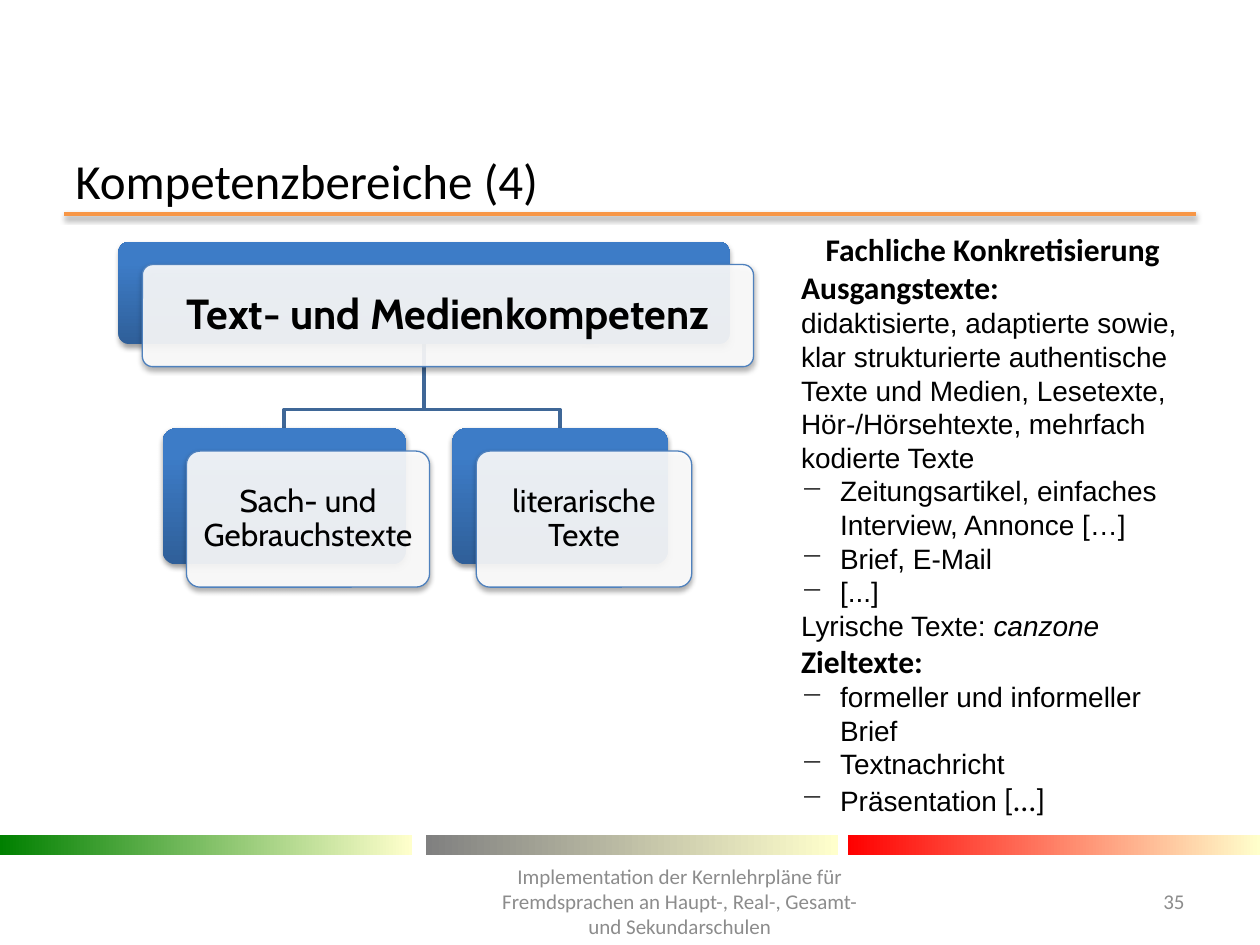
from dataclasses import dataclass

from lxml import etree
from pptx import Presentation
from pptx import util as u
from pptx.dml import color
from pptx.enum import shapes, text
from pptx.oxml import ns


@dataclass(frozen=True)
class Theme:
    black: str = "000000"
    white: str = "FFFFFF"
    gray: str = "8C8C8C"
    orange: str = "F79646"
    edge: str = "4F81BD"
    link: str = "3F6797"
    deep: str = "2F5F99"
    blue: str = "3D7CC7"
    cream: str = "FFFFCC"
    bars: tuple = ("008000", "808080", "FF0000")
    title: int = 28
    root: int = 24
    head: int = 18
    body: int = 16
    foot: int = 12


T = Theme()
HEAD = {"name": "Calibri", "size": T.head, "bold": True}
BODY = {"name": "Arial", "size": T.body}
FOOT = {"name": "Calibri", "size": T.foot, "color": T.gray}
LEAF = {"name": "Cabin", "size": T.head}
CENTER = text.PP_ALIGN.CENTER
MIDDLE = text.MSO_ANCHOR.MIDDLE


def rgb(code):
    return color.RGBColor.from_string(code)


def add_xml(parent, tag, **attrs):
    return etree.SubElement(parent, ns.qn(tag), {k: str(v) for k, v in attrs.items()})


def shade(shape, alpha=0):
    """Set a soft drop shadow, or none; call after fill and line are set."""
    effects = add_xml(shape._element.spPr, "a:effectLst")
    if alpha:
        drop = add_xml(effects, "a:outerShdw", blurRad=u.Pt(3.1), dist=u.Pt(1.7),
                       dir=5400000, rotWithShape=0)
        tint = add_xml(drop, "a:srgbClr", val=T.black)
        add_xml(tint, "a:alpha", val=alpha * 1000)


def blend(shape, first, last, angle=0, end=1.0):
    shape.fill.gradient()
    shape.fill.gradient_angle = angle
    for stop, code, pos in zip(shape.fill.gradient_stops, (first, last), (0, end)):
        stop.color.rgb = rgb(code)
        stop.position = pos


def stroke(shape, code, width):
    shape.line.color.rgb = rgb(code)
    shape.line.width = u.Pt(width)


def add_box(slide, kind, left, top, width, height):
    box = slide.shapes.add_shape(kind, *map(u.Inches, (left, top, width, height)))
    if kind == shapes.MSO_SHAPE.ROUNDED_RECTANGLE:
        box.adjustments[0] = 0.1
    return box


def add_run(para, words, look):
    run = para.add_run()
    run.text = words
    for key, value in {"color": T.black, **look}.items():
        if key == "color":
            run.font.color.rgb = rgb(value)
        else:
            setattr(run.font, key, u.Pt(value) if key == "size" else value)


def add_bullet(para):
    props = para._p.get_or_add_pPr()
    props.set("marL", str(u.Inches(0.31)))
    props.set("indent", str(-u.Inches(0.31)))
    add_xml(props, "a:buChar", char="−")


def add_text(slide, place, words, look, align=None):
    box = slide.shapes.add_textbox(*map(u.Inches, place))
    frame = box.text_frame
    frame.word_wrap = True
    frame.vertical_anchor = MIDDLE
    para = frame.paragraphs[0]
    para.alignment = align
    add_run(para, words, look)


def add_node(slide, place, words, look):
    """Draw a blue plate with a pale, offset card that holds the words."""
    left, top, width, height = place
    kind = shapes.MSO_SHAPE.ROUNDED_RECTANGLE
    plate = add_box(slide, kind, *place)
    blend(plate, T.deep, T.blue, 90, 0.8)
    plate.line.fill.background()
    shade(plate, 38)

    card = add_box(slide, kind, left + 0.19, top + 0.18, width, height)
    card.fill.solid()
    card.fill.fore_color.rgb = rgb(T.white)
    tint = card._element.spPr.find(".//" + ns.qn("a:srgbClr"))
    add_xml(tint, "a:alpha", val=90000)
    stroke(card, T.edge, 0.75)
    shade(card, 35)

    frame = card.text_frame
    for side in ("left", "right", "top", "bottom"):
        setattr(frame, "margin_" + side, u.Inches(0.1))
    frame.word_wrap = True
    frame.vertical_anchor = MIDDLE
    para = frame.paragraphs[0]
    para.alignment = CENTER
    para.line_spacing = 0.9
    add_run(para, words, look)


def add_link(slide, start, end):
    """Draw an elbow that turns a little above its end."""
    turn = end[1] - 0.15
    points = [(start[0], turn), (end[0], turn), end]
    pen = slide.shapes.build_freeform(*map(u.Inches, start))
    pen.add_line_segments([(u.Inches(x), u.Inches(y)) for x, y in points], close=False)
    link = pen.convert_to_shape()
    link.fill.background()
    stroke(link, T.link, 2)
    shade(link)


def add_frame(slide):
    rule = slide.shapes.add_connector(
        shapes.MSO_CONNECTOR.STRAIGHT, *map(u.Inches, (0.51, 1.7, 9.49, 1.7)))
    stroke(rule, T.orange, 2)
    shade(rule, 38)
    for left, code in zip((0, 3.38, 6.73), T.bars):
        bar = add_box(slide, shapes.MSO_SHAPE.RECTANGLE, left, 6.63, 3.27, 0.16)
        blend(bar, code, T.cream)
        bar.line.fill.background()
        shade(bar)
    add_text(slide, (0.5, 1.23, 9, 0.39), "Kompetenzbereiche (4)",
             {"name": "Calibri", "size": T.title})
    add_text(slide, (3.82, 6.95, 3.15, 0.4),
             "Implementation der Kernlehrpläne für Fremdsprachen an "
             "Haupt-, Real-, Gesamt- und Sekundarschulen", FOOT, CENTER)
    add_text(slide, (8.86, 6.95, 0.64, 0.4), "35", FOOT, text.PP_ALIGN.RIGHT)


def add_tree(slide):
    root = (0.94, 1.92, 4.85, 0.81)
    leaves = [((1.29, 3.4, 1.93, 1.08), "Sach- und Gebrauchstexte"),
              ((3.59, 3.4, 1.71, 1.08), "literarische Texte")]
    start = (root[0] + root[2] / 2, root[1] + root[3])
    for (left, top, width, _), _ in reversed(leaves):
        add_link(slide, start, (left + width / 2, top))
    add_node(slide, root, "Text- und Medienkompetenz",
             {"name": "Cabin", "size": T.root, "bold": True})
    for place, words in leaves:
        add_node(slide, place, words, LEAF)


def add_notes(slide):
    """Fill the right column; each row is a bullet flag and its runs."""
    rows = [
        (False, [("Fachliche Konkretisierung", HEAD)]),
        (False, [("Ausgangstexte:", HEAD)]),
        (False, [("didaktisierte, adaptierte sowie, klar strukturierte authentische "
                  "Texte und Medien, Lesetexte, Hör-/Hörsehtexte, mehrfach kodierte "
                  "Texte", BODY)]),
        (True, [("Zeitungsartikel, einfaches Interview, Annonce […]", BODY)]),
        (True, [("Brief, E-Mail", BODY)]),
        (True, [("[...]", BODY)]),
        (False, [("Lyrische Texte: ", BODY), ("canzone", {**BODY, "italic": True})]),
        (False, [("Zieltexte:", HEAD)]),
        (True, [("formeller und informeller Brief", BODY)]),
        (True, [("Textnachricht", BODY)]),
        (True, [("Präsentation", BODY), (" […]", {**HEAD, "bold": False})]),
    ]
    box = slide.shapes.add_textbox(*map(u.Inches, (6.26, 1.78, 3.24, 4.64)))
    frame = box.text_frame
    frame.word_wrap = True
    for i, (bullet, runs) in enumerate(rows):
        para = frame.add_paragraph() if i else frame.paragraphs[0]
        if bullet:
            add_bullet(para)
        for words, look in runs:
            add_run(para, words, look)
    frame.paragraphs[0].alignment = CENTER


def main():
    deck = Presentation()
    deck.slide_width, deck.slide_height = u.Inches(10), u.Inches(7.5)
    slide = deck.slides.add_slide(deck.slide_layouts[6])
    add_frame(slide)
    add_tree(slide)
    add_notes(slide)
    deck.save("out.pptx")


if __name__ == "__main__":
    main()
